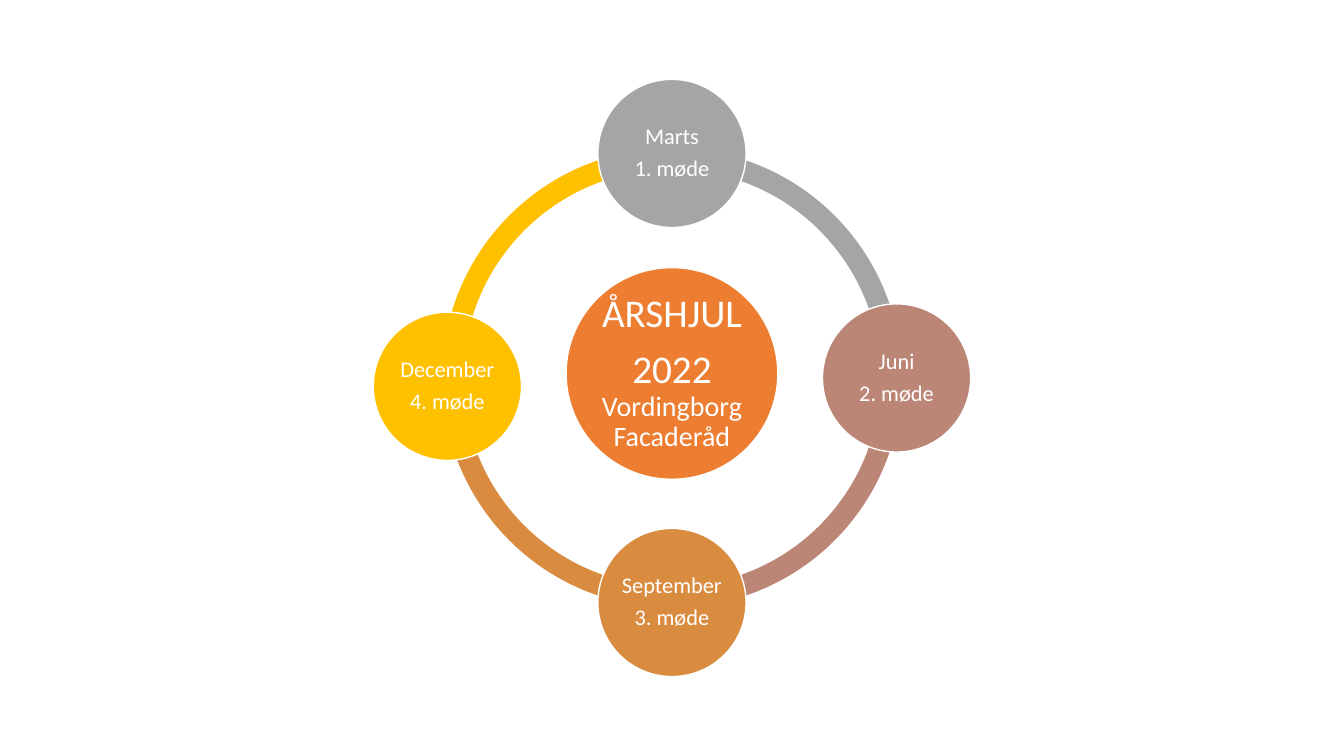
"""Build the annual wheel slide: four meetings on a ring around a central hub."""
import math

import pptx
import pptx.dml.color
import pptx.enum.shapes
import pptx.enum.text
import pptx.util

RGBColor = pptx.dml.color.RGBColor
ShapeType = pptx.enum.shapes.MSO_SHAPE

WHITE = RGBColor(0xFF, 0xFF, 0xFF)
ORANGE = RGBColor(0xED, 0x7D, 0x31)
GREY = RGBColor(0xA5, 0xA5, 0xA5)
ROSE = RGBColor(0xBB, 0x86, 0x76)
OCHRE = RGBColor(0xD9, 0x8C, 0x3F)
YELLOW = RGBColor(0xFF, 0xC0, 0x00)

FONT = "Calibri"
WIDTH = pptx.util.Inches(13.33)
HEIGHT = pptx.util.Inches(7.5)
CENTER_X = 0.5 * WIDTH
CENTER_Y = 0.5 * HEIGHT
RING_SIZE = 0.608 * HEIGHT
ORBIT = 0.297 * HEIGHT
MEETING_SIZE = 0.196 * HEIGHT
HUB_SIZE = 0.28 * HEIGHT
HUB_Y = 0.494 * HEIGHT
DECEMBER_DROP = 0.011 * HEIGHT
RING_THICKNESS = 0.046
ANGLE_UNIT = 0.6


def add_round(kind, center_x, center_y, size, color):
    """Add a filled shape of equal width and height around a center."""
    shape = slide.shapes.add_shape(
        kind, round(center_x - size / 2), round(center_y - size / 2), round(size), round(size)
    )
    shape.shadow.inherit = False
    shape.fill.solid()
    shape.fill.fore_color.rgb = color
    shape.line.fill.background()
    return shape


def add_circle(center_x, center_y, size, color, inset, paragraphs):
    """Add a white-edged circle whose paragraphs are lists of (text, points) runs."""
    circle = add_round(ShapeType.OVAL, center_x, center_y, size, color)
    circle.line.color.rgb = WHITE
    circle.line.width = pptx.util.Pt(1)
    frame = circle.text_frame
    frame.word_wrap = True
    frame.vertical_anchor = pptx.enum.text.MSO_ANCHOR.MIDDLE
    frame.margin_left = frame.margin_right = pptx.util.Inches(inset)
    frame.margin_top = frame.margin_bottom = pptx.util.Inches(inset)
    for index, runs in enumerate(paragraphs):
        paragraph = frame.add_paragraph() if index else frame.paragraphs[0]
        paragraph.alignment = pptx.enum.text.PP_ALIGN.CENTER
        paragraph.line_spacing = 0.9
        paragraph.space_after = pptx.util.Pt(0.35 * runs[0][1])
        for text, points in runs:
            run = paragraph.add_run()
            run.text = text
            run.font.name = FONT
            run.font.size = pptx.util.Pt(points)
            run.font.color.rgb = WHITE


presentation = pptx.Presentation()
presentation.slide_width = WIDTH
presentation.slide_height = HEIGHT
slide = presentation.slides.add_slide(presentation.slide_layouts[6])

arcs = [
    (177.72, 270.31, YELLOW),
    (89.69, 177.72, OCHRE),
    (0, 90, ROSE),
    (270, 0, GREY),
]
for start, end, color in arcs:
    arc = add_round(ShapeType.BLOCK_ARC, CENTER_X, CENTER_Y, RING_SIZE, color)
    arc.adjustments[0] = start * ANGLE_UNIT
    arc.adjustments[1] = end * ANGLE_UNIT
    arc.adjustments[2] = RING_THICKNESS

hub_text = [[("ÅRSHJUL", 28)], [("2022 ", 28), ("Vordingborg Facaderåd", 20)]]
add_circle(CENTER_X, HUB_Y, HUB_SIZE, ORANGE, 0.04, hub_text)

meetings = [
    ("Marts", GREY, 0),
    ("Juni", ROSE, 0),
    ("September", OCHRE, 0),
    ("December", YELLOW, DECEMBER_DROP),
]
for index, (month, color, drop) in enumerate(meetings):
    angle = math.radians(90 * index - 90)
    add_circle(
        CENTER_X + ORBIT * math.cos(angle),
        CENTER_Y + ORBIT * math.sin(angle) + drop,
        MEETING_SIZE,
        color,
        0.02,
        [[(month, 16)], [(f"{index + 1}. møde", 16)]],
    )

presentation.save("out.pptx")
